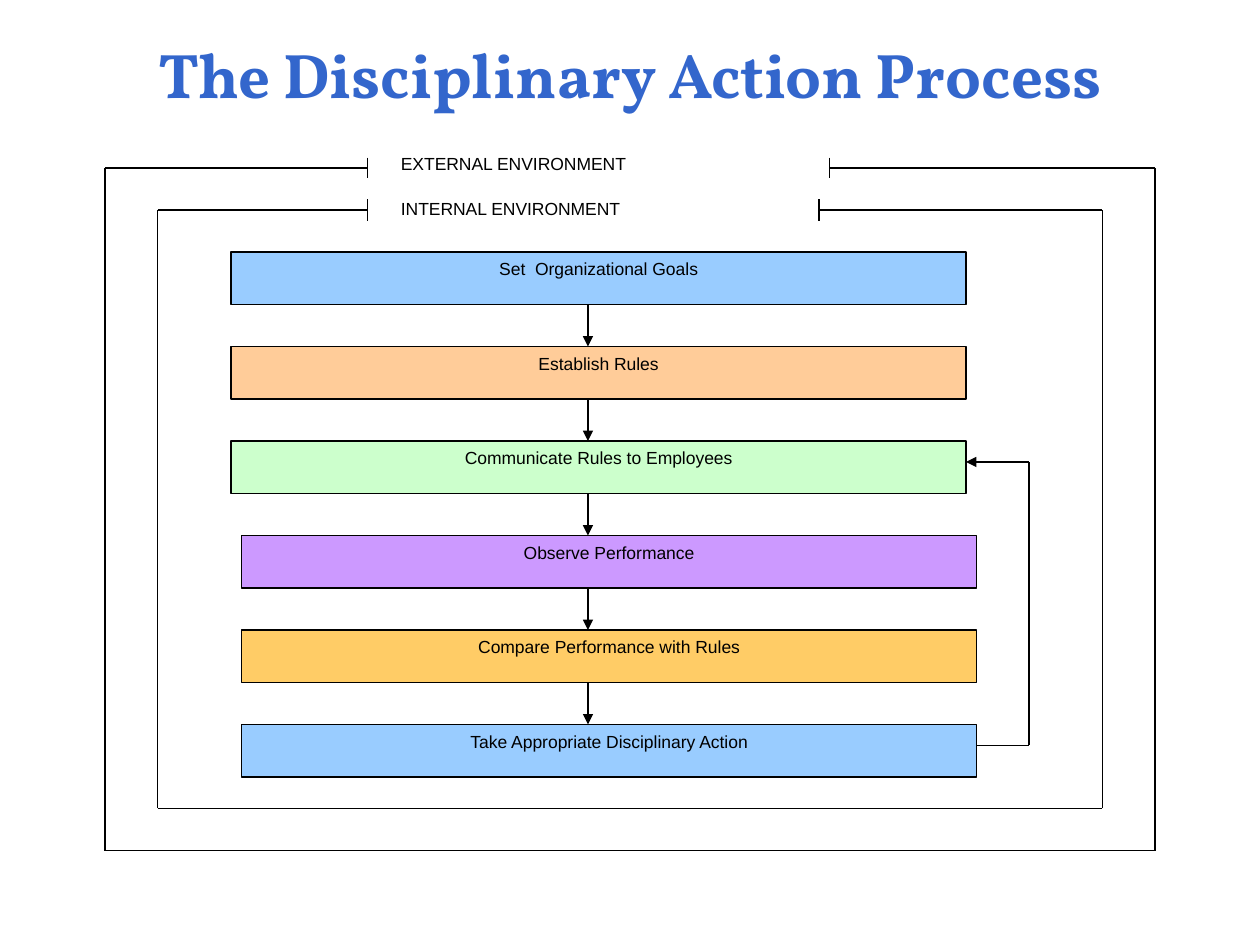
from dataclasses import dataclass
from itertools import pairwise

from lxml.etree import SubElement
from pptx import Presentation
from pptx.dml.color import RGBColor as Rgb
from pptx.enum.shapes import MSO_CONNECTOR as Link, MSO_SHAPE as Kind
from pptx.enum.text import MSO_ANCHOR as Anchor, MSO_AUTO_SIZE as Fit, PP_ALIGN as Align
from pptx.oxml.ns import qn
from pptx.util import Cm, Pt


@dataclass(frozen=True)
class Theme:
    head: str = "3366CC"
    ink: str = "000000"
    blue: str = "99CCFF"
    peach: str = "FFCC99"
    green: str = "CCFFCC"
    lilac: str = "CC99FF"
    gold: str = "FFCC66"
    serif: str = "Vollkorn"
    sans: str = "Arial"
    big: int = 36
    small: int = 10
    rule: float = 0.75


THEME = Theme()

# Steps of the process: wording, fill, left edge
STEPS = [
    ("Set  Organizational Goals", THEME.blue, 22),
    ("Establish Rules", THEME.peach, 22),
    ("Communicate Rules to Employees", THEME.green, 22),
    ("Observe Performance", THEME.lilac, 23),
    ("Compare Performance with Rules", THEME.gold, 23),
    ("Take Appropriate Disciplinary Action", THEME.blue, 23),
]
TOP, PITCH, WIDE, HIGH = 24, 9, 70, 5
AXIS = 56

# Frames: wording, label top, left, top, right, bottom, end of the gap
FRAMES = [
    ("EXTERNAL ENVIRONMENT", 14, 10, 16, 110, 81, 79),
    ("INTERNAL ENVIRONMENT", 18.25, 15, 20, 105, 77, 78),
]
GAP = 35


def grid(*units):
    """Turn grid units, twelve to the inch, into lengths."""
    return [Cm(unit * 2.54 / 12) for unit in units]


def write(frame, text, align, font=THEME.sans, size=THEME.small, ink=THEME.ink, bold=False):
    frame.word_wrap = True
    frame.auto_size = Fit.NONE
    frame.vertical_anchor = Anchor.TOP
    para = frame.paragraphs[0]
    para.alignment = align
    run = para.add_run()
    run.text = text
    run.font.name = font
    run.font.size = Pt(size)
    run.font.bold = bold
    run.font.color.rgb = Rgb.from_string(ink)
    return para


def stroke(line):
    line.color.rgb = Rgb.from_string(THEME.ink)
    line.width = Pt(THEME.rule)


def add_title(slide):
    title = slide.shapes.title
    title.left, title.top, title.width, title.height = grid(6, 3.6, 108, 9.36)
    frame = title.text_frame
    frame.margin_top, frame.margin_bottom = grid(0.6, 1.2)
    para = write(frame, "The Disciplinary Action Process", Align.CENTER,
                 THEME.serif, THEME.big, THEME.head, True)
    para.line_spacing = 0.9


def add_step(slide, text, fill, left, top):
    box = slide.shapes.add_shape(Kind.RECTANGLE, *grid(left, top, WIDE, HIGH))
    box.shadow.inherit = False
    box.fill.solid()
    box.fill.fore_color.rgb = Rgb.from_string(fill)
    stroke(box.line)
    write(box.text_frame, text, Align.CENTER)


def add_label(slide, text, top):
    box = slide.shapes.add_textbox(*grid(37, top, 42, 4.8))
    write(box.text_frame, text, Align.LEFT)


def add_line(slide, start, end, arrow=False):
    line = slide.shapes.add_connector(Link.STRAIGHT, *grid(*start, *end))
    stroke(line.line)
    props = line._element.spPr
    if arrow:
        SubElement(props.find(qn("a:ln")), qn("a:tailEnd"), type="triangle")
    SubElement(props, qn("a:effectLst"))


def add_route(slide, points, arrow=False):
    """Join points by straight lines, with an arrowhead at the last."""
    for start, end in pairwise(points):
        add_line(slide, start, end, arrow and end == points[-1])


def add_frame(slide, text, head, left, top, right, low, end):
    add_route(slide, [(GAP, top), (left, top), (left, low),
                      (right, low), (right, top), (end, top)])
    for x in (GAP, end):
        add_line(slide, (x, top - 1), (x, top + 1))
    add_label(slide, text, head)


def main():
    deck = Presentation()
    deck.slide_width, deck.slide_height = grid(120, 90)
    slide = deck.slides.add_slide(deck.slide_layouts[5])
    add_title(slide)

    # Process steps, top to bottom
    tops = [TOP + PITCH * i for i in range(len(STEPS))]
    for step, top in zip(STEPS, tops):
        add_step(slide, *step, top)
    for upper, lower in pairwise(tops):
        add_line(slide, (AXIS, upper + HIGH), (AXIS, lower), True)

    # Feedback from the last step to the third
    back, goal = tops[5] + 2, tops[2] + 2
    add_route(slide, [(93, back), (98, back), (98, goal), (92, goal)], True)

    # Environments around the process
    for frame in FRAMES:
        add_frame(slide, *frame)

    deck.save("out.pptx")


if __name__ == "__main__":
    main()
